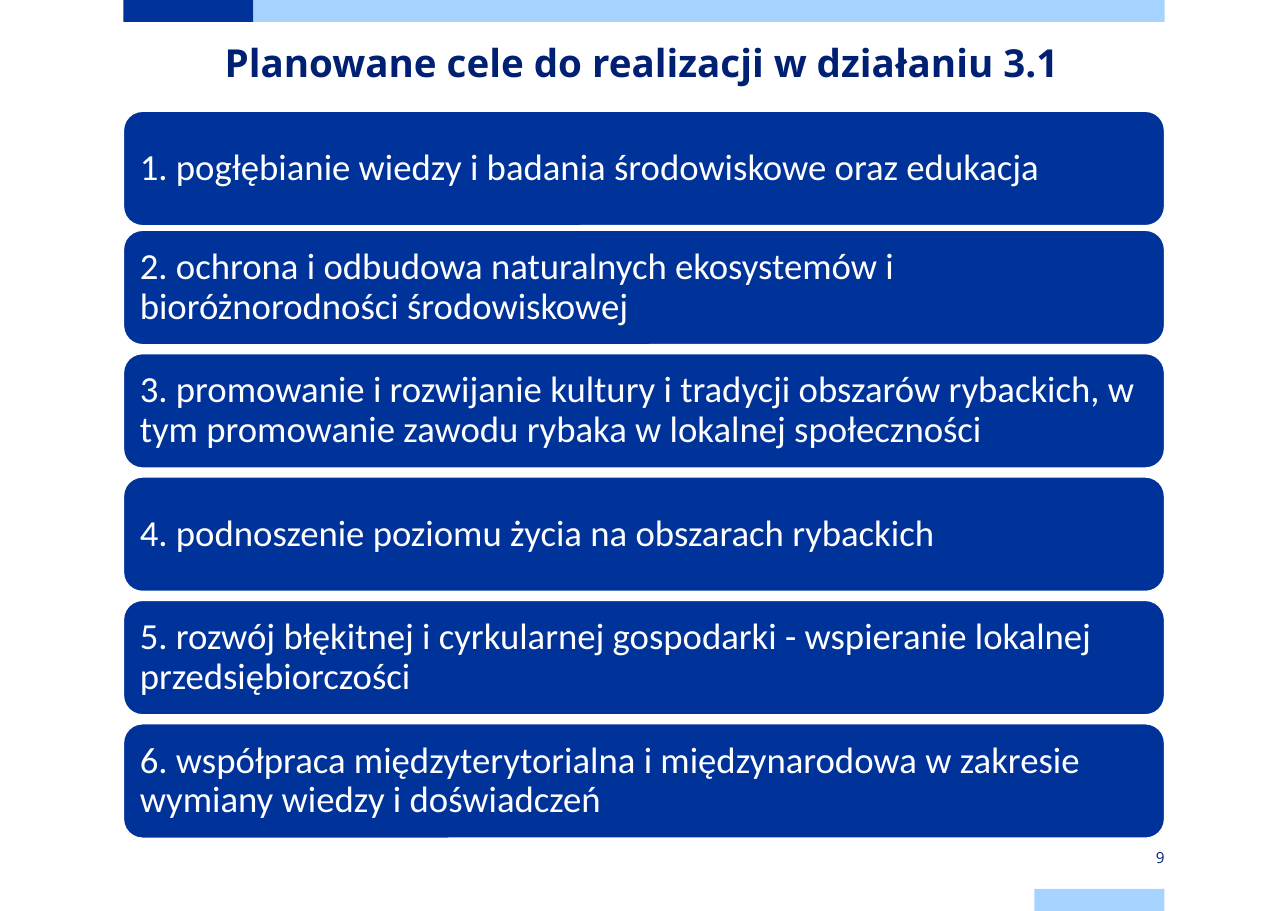
from pptx import Presentation
from pptx.dml.color import RGBColor
from pptx.enum.shapes import MSO_SHAPE
from pptx.enum.text import MSO_ANCHOR, PP_ALIGN
from pptx.util import Inches, Pt

RECT, ROUNDED = MSO_SHAPE.RECTANGLE, MSO_SHAPE.ROUNDED_RECTANGLE
TOP, MIDDLE = MSO_ANCHOR.TOP, MSO_ANCHOR.MIDDLE
LEFT, CENTER, RIGHT = PP_ALIGN.LEFT, PP_ALIGN.CENTER, PP_ALIGN.RIGHT

COLORS = {"navy": "003399", "sky": "A6D3FF", "ink": "002073", "white": "FFFFFF"}
PAGE_WIDTH, PAGE_HEIGHT = 11.69, 8.27
MARGIN = 1.12
CONTENT_WIDTH = PAGE_WIDTH - 2 * MARGIN
COLUMN = CONTENT_WIDTH / 8
BAR_HEIGHT = 0.2
GOAL_HEIGHT, GOAL_PITCH = 1.04, 1.12
FIRST_GOAL_TOP, SECOND_GOAL_TOP = 1.01, 2.09

GOALS = [
    "1. pogłębianie wiedzy i badania środowiskowe oraz edukacja",
    "2. ochrona i odbudowa naturalnych ekosystemów i bioróżnorodności środowiskowej",
    "3. promowanie i rozwijanie kultury i tradycji obszarów rybackich, "
    "w tym promowanie zawodu rybaka w lokalnej społeczności",
    "4. podnoszenie poziomu życia na obszarach rybackich",
    "5. rozwój błękitnej i cyrkularnej gospodarki - wspieranie lokalnej przedsiębiorczości",
    "6. współpraca międzyterytorialna i międzynarodowa w zakresie wymiany wiedzy i doświadczeń",
]

deck = Presentation()
deck.slide_width, deck.slide_height = Inches(PAGE_WIDTH), Inches(PAGE_HEIGHT)
page = deck.slides.add_slide(deck.slide_layouts[6])


def add_block(kind, left, top, width, height, fill):
    block = page.shapes.add_shape(
        kind, Inches(left), Inches(top), Inches(width), Inches(height))
    block.shadow.inherit = False
    block.fill.solid()
    block.fill.fore_color.rgb = RGBColor.from_string(COLORS[fill])
    block.line.fill.background()
    return block


def write(box, text, size, font="Open Sans", color="ink", bold=False,
          align=LEFT, anchor=MIDDLE, inset=0, spacing=1.0):
    frame = box.text_frame
    frame.word_wrap = True
    frame.vertical_anchor = anchor
    frame.margin_left = frame.margin_right = Inches(inset)
    frame.margin_top = frame.margin_bottom = Inches(inset)
    para = frame.paragraphs[0]
    para.alignment, para.line_spacing = align, spacing
    span = para.add_run()
    span.text = text
    span.font.name, span.font.size, span.font.bold = font, Pt(size), bold
    span.font.color.rgb = RGBColor.from_string(COLORS[color])


add_block(RECT, MARGIN, 0, COLUMN, BAR_HEIGHT, "navy")
add_block(RECT, MARGIN + COLUMN, 0, 7 * COLUMN, BAR_HEIGHT, "sky")
add_block(RECT, MARGIN + 7 * COLUMN, PAGE_HEIGHT - BAR_HEIGHT, COLUMN, BAR_HEIGHT, "sky")

title = page.shapes.add_textbox(
    Inches(1.1), Inches(0.27), Inches(CONTENT_WIDTH), Inches(0.79))
write(title, "Planowane cele do realizacji w działaniu 3.1", 25.2,
      bold=True, align=CENTER, anchor=TOP, spacing=Pt(36))

for row, goal in enumerate(GOALS):
    top = SECOND_GOAL_TOP + (row - 1) * GOAL_PITCH if row else FIRST_GOAL_TOP
    box = add_block(ROUNDED, MARGIN, top, CONTENT_WIDTH, GOAL_HEIGHT, "navy")
    box.line.color.rgb = RGBColor.from_string(COLORS["white"])
    box.line.width = Pt(1)
    write(box, goal, 24, font="Calibri", color="white", inset=0.1, spacing=0.9)

page_number = page.shapes.add_textbox(
    Inches(MARGIN + 7 * COLUMN), Inches(7.68), Inches(COLUMN), Inches(0.2))
write(page_number, "9", 10, align=RIGHT)

deck.save("out.pptx")
